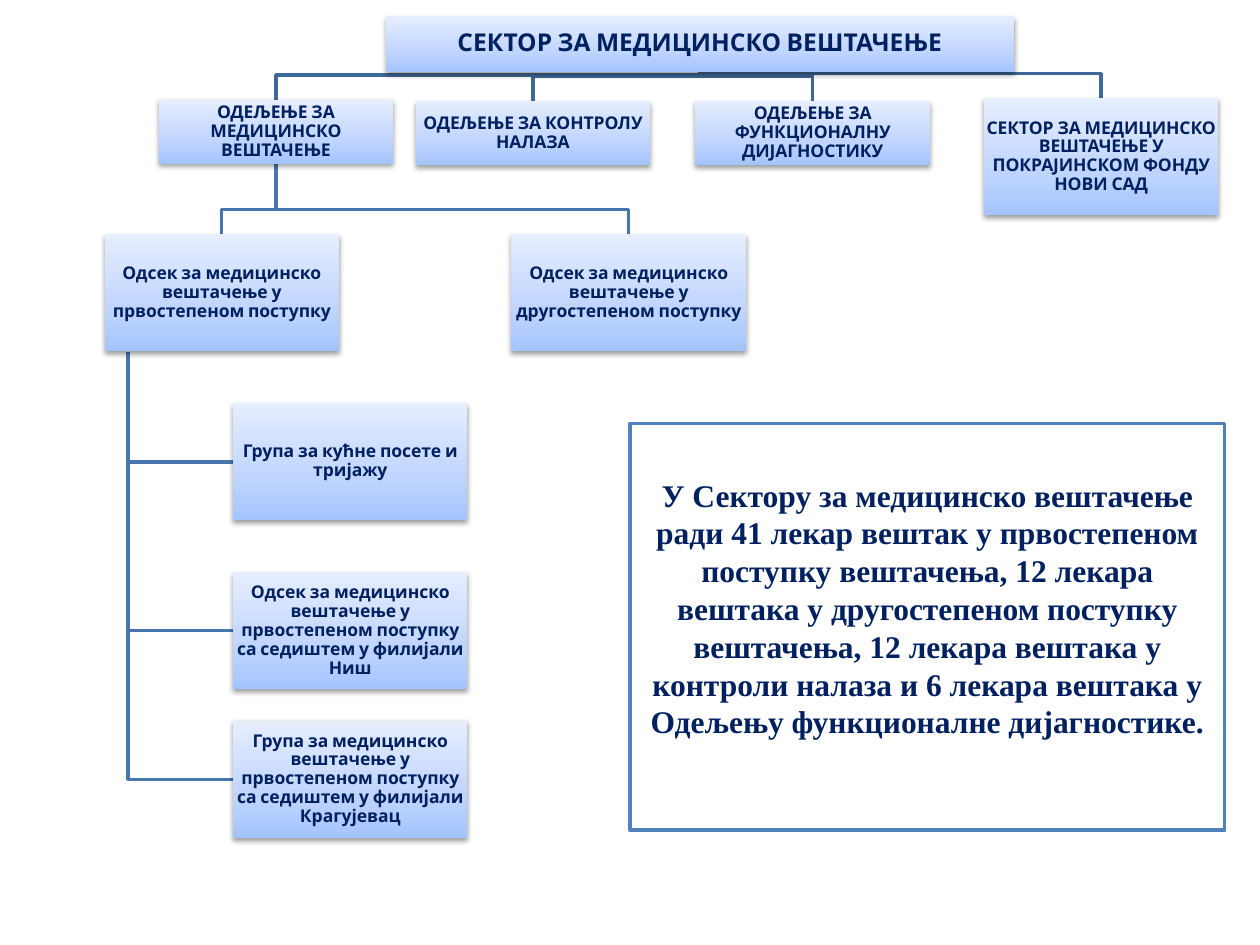
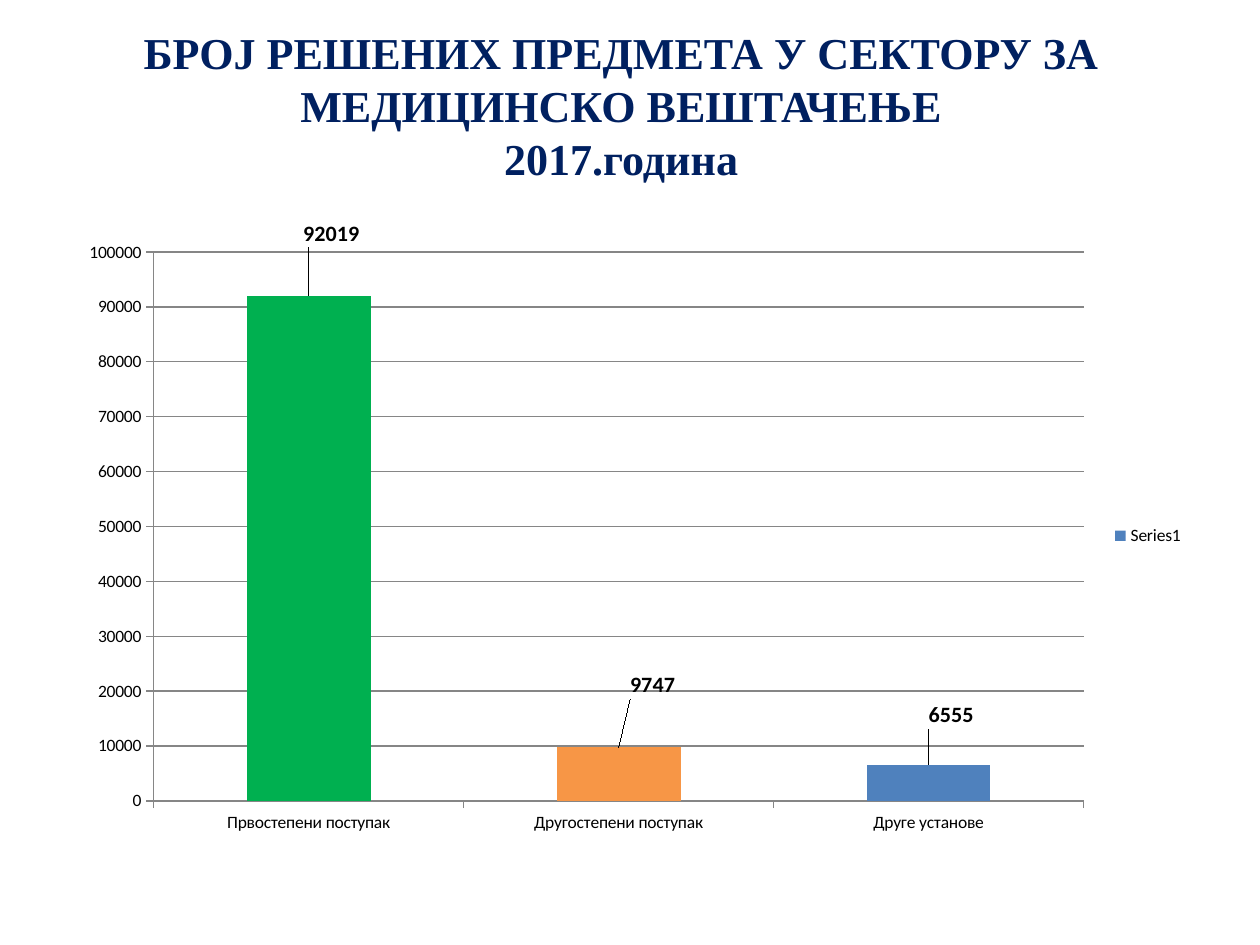
from dataclasses import dataclass
from typing import Any

from pptx import Presentation
from pptx.chart.data import CategoryChartData
from pptx.dml.color import RGBColor
from pptx.enum.chart import XL_CHART_TYPE as ChartType
from pptx.enum.chart import XL_LABEL_POSITION as LabelPosition
from pptx.enum.chart import XL_LEGEND_POSITION as LegendPosition
from pptx.enum.chart import XL_TICK_MARK as TickMark
from pptx.enum.shapes import MSO_SHAPE as Preset
from pptx.enum.text import MSO_ANCHOR as Anchor
from pptx.enum.text import MSO_AUTO_SIZE as AutoSize
from pptx.enum.text import PP_ALIGN as Align
from pptx.oxml import parse_xml
from pptx.oxml.ns import nsdecls
from pptx.util import Inches, Pt

# Grid: 100 columns by 75 rows
WIDTH, HEIGHT = Inches(10), Inches(7.5)
COLUMN, ROW = WIDTH / 100, HEIGHT / 75

# Colours and fonts
NAVY = RGBColor(0x00, 0x20, 0x60)
BLUE = RGBColor(0x4F, 0x81, 0xBD)
TOP_LINE = RGBColor(0x3F, 0x67, 0x97)
LOWER_LINE = RGBColor(0x48, 0x75, 0xAC)
GREEN = RGBColor(0x00, 0xB0, 0x50)
ORANGE = RGBColor(0xF7, 0x96, 0x46)
GREY = RGBColor(0x86, 0x86, 0x86)
WHITE = RGBColor(0xFF, 0xFF, 0xFF)
BLACK = RGBColor(0x00, 0x00, 0x00)
BOX_GRADIENT = (
    (0, RGBColor(0xA4, 0xC4, 0xFF)),
    (35, RGBColor(0xBF, 0xD4, 0xFF)),
    (100, RGBColor(0xE6, 0xEE, 0xFF)),
)
SERIF, CHART_FONT, UNIT_FONT = "Times New Roman", "Calibri", "Cabin"

# Connecting lines
BEND = 1.95
TRUNK_SHARE = 0.1


@dataclass(frozen=True)
class Area:
    left: float
    top: float
    width: float
    height: float

    def emu(self) -> tuple[int, int, int, int]:
        return (round(self.left * COLUMN), round(self.top * ROW),
                round(self.width * COLUMN), round(self.height * ROW))

    @property
    def centre(self) -> float:
        return self.left + self.width / 2

    @property
    def middle(self) -> float:
        return self.top + self.height / 2

    @property
    def bottom(self) -> float:
        return self.top + self.height


@dataclass(frozen=True)
class Unit:
    text: str
    left: float
    top: float
    width: float = 18.6
    height: float = 9.3
    size: float = 10

    @property
    def area(self) -> Area:
        return Area(self.left, self.top, self.width, self.height)


@dataclass(frozen=True)
class Bar:
    category: str
    value: int
    color: RGBColor
    label_x: float
    label_y: float


SECTOR = Unit("СЕКТОР ЗА МЕДИЦИНСКО ВЕШТАЧЕЊЕ", 30.6, 1.3, 49.9, 4.4, 14)
EXPERTISE = Unit("ОДЕЉЕЊЕ ЗА МЕДИЦИНСКО ВЕШТАЧЕЊЕ", 12.6, 7.9, height=5.1)
DEPARTMENTS = (
    EXPERTISE,
    Unit("ОДЕЉЕЊЕ ЗА КОНТРОЛУ НАЛАЗА", 33, 8, height=5.1),
    Unit("ОДЕЉЕЊЕ ЗА ФУНКЦИОНАЛНУ ДИЈАГНОСТИКУ", 55.2, 8, height=5.1),
    Unit("СЕКТОР ЗА МЕДИЦИНСКО ВЕШТАЧЕЊЕ У ПОКРАЈИНСКОМ ФОНДУ НОВИ САД", 78.1, 7.8),
)
FIRST_INSTANCE = Unit("Одсек за медицинско вештачење у првостепеном поступку", 8.3, 18.6)
SECTIONS = (
    FIRST_INSTANCE,
    Unit("Одсек за медицинско вештачење у другостепеном поступку", 40.6, 18.6),
)
GROUPS = (
    Unit("Група за кућне посете и тријажу", 18.5, 32),
    Unit("Одсек за медицинско вештачење у првостепеном поступку "
         "са седиштем у филијали Ниш", 18.5, 45.4),
    Unit("Група за медицинско вештачење у првостепеном поступку "
         "са седиштем у филијали Крагујевац", 18.5, 57.2),
)
NOTE_AREA = Area(50, 33.6, 47.2, 32.3)
NOTE = (
    "У Сектору за медицинско вештачење ради 41 лекар вештак у првостепеном "
    "поступку вештачења, 12 лекара вештака у другостепеном поступку вештачења, "
    "12 лекара вештака у контроли налаза и 6 лекара вештака у Одељењу "
    "функционалне дијагностике."
)

TITLE_AREA = Area(4.3, 2.1, 90, 12.5)
TITLE = "БРОЈ РЕШЕНИХ ПРЕДМЕТА У СЕКТОРУ ЗА МЕДИЦИНСКО ВЕШТАЧЕЊЕ\n2017.година"
CHART_AREA = Area(5, 17.5, 90, 49.5)
PLOT_SHARES = {"x": 0.08, "y": 0.04, "w": 0.82, "h": 0.89}
BARS = (
    Bar("Првостепени поступак", 92019, GREEN, 0.02, -0.07),
    Bar("Другостепени поступак", 9747, ORANGE, 0.03, -0.07),
    Bar("Друге установе", 6555, BLUE, 0.02, -0.05),
)


def write(shape: Any, text: str, *, size: float, font: str,
          spacing: float = 1.0, inset: float | None = None) -> None:
    """Fill a shape with one centred, bold, navy paragraph."""
    frame = shape.text_frame
    frame.word_wrap = True
    frame.auto_size = AutoSize.NONE
    frame.vertical_anchor = Anchor.MIDDLE
    if inset is not None:
        frame.margin_left = frame.margin_right = Inches(inset)
        frame.margin_top = frame.margin_bottom = Inches(inset)
    para = frame.paragraphs[0]
    para.alignment = Align.CENTER
    para.line_spacing = spacing
    for index, line in enumerate(text.split("\n")):
        if index:
            para.add_line_break()
        span = para.add_run()
        span.text = line
        span.font.name, span.font.size = font, Pt(size)
        span.font.bold = True
        span.font.color.rgb = NAVY


def add_box(page: Any, area: Area) -> Any:
    box = page.shapes.add_shape(Preset.RECTANGLE, *area.emu())
    box.shadow.inherit = False
    return box


def add_unit(page: Any, unit: Unit) -> None:
    """Draw a gradient box with a soft shadow."""
    box = add_box(page, unit.area)
    box.line.fill.background()
    stops = "".join(
        f'<a:gs pos="{share * 1000}"><a:srgbClr val="{color}"/></a:gs>'
        for share, color in BOX_GRADIENT
    )
    properties = box.element.spPr
    properties.insert(2, parse_xml(
        f'<a:gradFill {nsdecls("a")} rotWithShape="1"><a:gsLst>{stops}</a:gsLst>'
        '<a:lin ang="16200000" scaled="0"/></a:gradFill>'))
    properties.xpath("a:effectLst")[0].append(parse_xml(
        f'<a:outerShdw {nsdecls("a")} blurRad="40000" dist="20000" dir="5400000" '
        'rotWithShape="0"><a:srgbClr val="000000"><a:alpha val="38000"/>'
        '</a:srgbClr></a:outerShdw>'))
    write(box, unit.text, size=unit.size, font=UNIT_FONT, spacing=0.9, inset=0.01)


def add_path(page: Any, points: list[tuple[float, float]], color: RGBColor) -> None:
    start, *rest = [(round(x * COLUMN), round(y * ROW)) for x, y in points]
    builder = page.shapes.build_freeform(*start)
    builder.add_line_segments(rest, close=False)
    path = builder.convert_to_shape()
    path.shadow.inherit = False
    path.fill.background()
    path.line.color.rgb = color
    path.line.width = Pt(2)


def add_fork(page: Any, parent: Unit, child: Unit, color: RGBColor) -> None:
    """Run from the parent's bottom to the child's top."""
    start, end = parent.area, child.area
    bend = end.top - BEND
    add_path(page, [(start.centre, start.bottom), (start.centre, bend),
                    (end.centre, bend), (end.centre, end.top)], color)


def add_branch(page: Any, parent: Unit, child: Unit, color: RGBColor) -> None:
    """Run down a trunk to the child's left side."""
    start, end = parent.area, child.area
    trunk = start.left + start.width * TRUNK_SHARE
    add_path(page, [(trunk, start.bottom), (trunk, end.middle),
                    (end.left, end.middle)], color)


def manual_layout(shares: dict[str, float], inner: bool = False) -> Any:
    parts = "".join(f'<c:{key} val="{share}"/>' for key, share in shares.items())
    modes = ('<c:layoutTarget val="inner"/><c:xMode val="edge"/>'
             '<c:yMode val="edge"/>') if inner else ""
    return parse_xml(f'<c:layout {nsdecls("c")}><c:manualLayout>{modes}{parts}'
                     '</c:manualLayout></c:layout>')


def build_structure(deck: Any) -> None:
    page = deck.slides.add_slide(deck.slide_layouts[6])

    # Lines lie behind the boxes
    for department in reversed(DEPARTMENTS):
        add_fork(page, SECTOR, department, TOP_LINE)
    for section in SECTIONS:
        add_fork(page, EXPERTISE, section, LOWER_LINE)
    for group in GROUPS:
        add_branch(page, FIRST_INSTANCE, group, LOWER_LINE)
    for unit in (SECTOR, *DEPARTMENTS, *SECTIONS, *GROUPS):
        add_unit(page, unit)

    # Staff note, raised by a deep bottom margin
    note = add_box(page, NOTE_AREA)
    note.fill.solid()
    note.fill.fore_color.rgb = WHITE
    note.line.color.rgb = BLUE
    note.line.width = Pt(2)
    write(note, NOTE, size=18, font=SERIF)
    note.text_frame.margin_bottom = Inches(0.35)


def build_cases(deck: Any) -> None:
    page = deck.slides.add_slide(deck.slide_layouts[5])
    title = page.shapes.title
    title.left, title.top, title.width, title.height = TITLE_AREA.emu()
    write(title, TITLE, size=25.2, font=SERIF)

    # Column chart
    data = CategoryChartData()
    data.categories = [bar.category for bar in BARS]
    data.add_series("Series1", [bar.value for bar in BARS])
    chart = page.shapes.add_chart(
        ChartType.COLUMN_CLUSTERED, *CHART_AREA.emu(), data).chart
    chart.font.name, chart.font.size = CHART_FONT, Pt(10)
    chart.font.color.rgb = BLACK
    chart.has_title = False
    chart.has_legend = True
    chart.legend.position = LegendPosition.RIGHT
    chart.legend.include_in_layout = False

    # Axes
    for axis in (chart.category_axis, chart.value_axis):
        axis.major_tick_mark = TickMark.OUTSIDE
        axis.minor_tick_mark = TickMark.NONE
        axis.format.line.color.rgb = GREY
    chart.value_axis.has_major_gridlines = True
    chart.value_axis.major_gridlines.format.line.color.rgb = GREY
    chart.value_axis.minimum_scale = 0
    chart.value_axis.maximum_scale = 100000
    chart.value_axis.major_unit = 10000

    # Bars and their shifted labels
    plot = chart.plots[0]
    plot.gap_width = 150
    plot.vary_by_categories = False
    series = plot.series[0]
    series.format.fill.solid()
    series.format.fill.fore_color.rgb = BLUE
    for index, bar in enumerate(BARS):
        point = series.points[index]
        point.format.fill.solid()
        point.format.fill.fore_color.rgb = bar.color
        label = point.data_label
        label.font.size, label.font.bold = Pt(12.6), True
        label.position = LabelPosition.OUTSIDE_END
    for bar, label in zip(BARS, chart.element.xpath(".//c:dLbl")):
        label.insert(1, manual_layout({"x": bar.label_x, "y": bar.label_y}))
    chart.element.xpath(".//c:ser/c:dLbls")[0].append(parse_xml(
        f'<c:extLst {nsdecls("c")}><c:ext '
        'uri="{CE6537A1-D6FC-4f65-9D91-7224C49458BB}" '
        'xmlns:c15="http://schemas.microsoft.com/office/drawing/2012/chart">'
        '<c15:showLeaderLines val="1"/></c:ext></c:extLst>'))

    # Plot area
    plot_area = chart.element.xpath(".//c:plotArea")[0]
    for layout in plot_area.xpath("c:layout"):
        plot_area.remove(layout)
    plot_area.insert(0, manual_layout(PLOT_SHARES, inner=True))


def main() -> None:
    deck = Presentation()
    deck.slide_width, deck.slide_height = WIDTH, HEIGHT
    build_structure(deck)
    build_cases(deck)
    deck.save("out.pptx")


if __name__ == "__main__":
    main()
